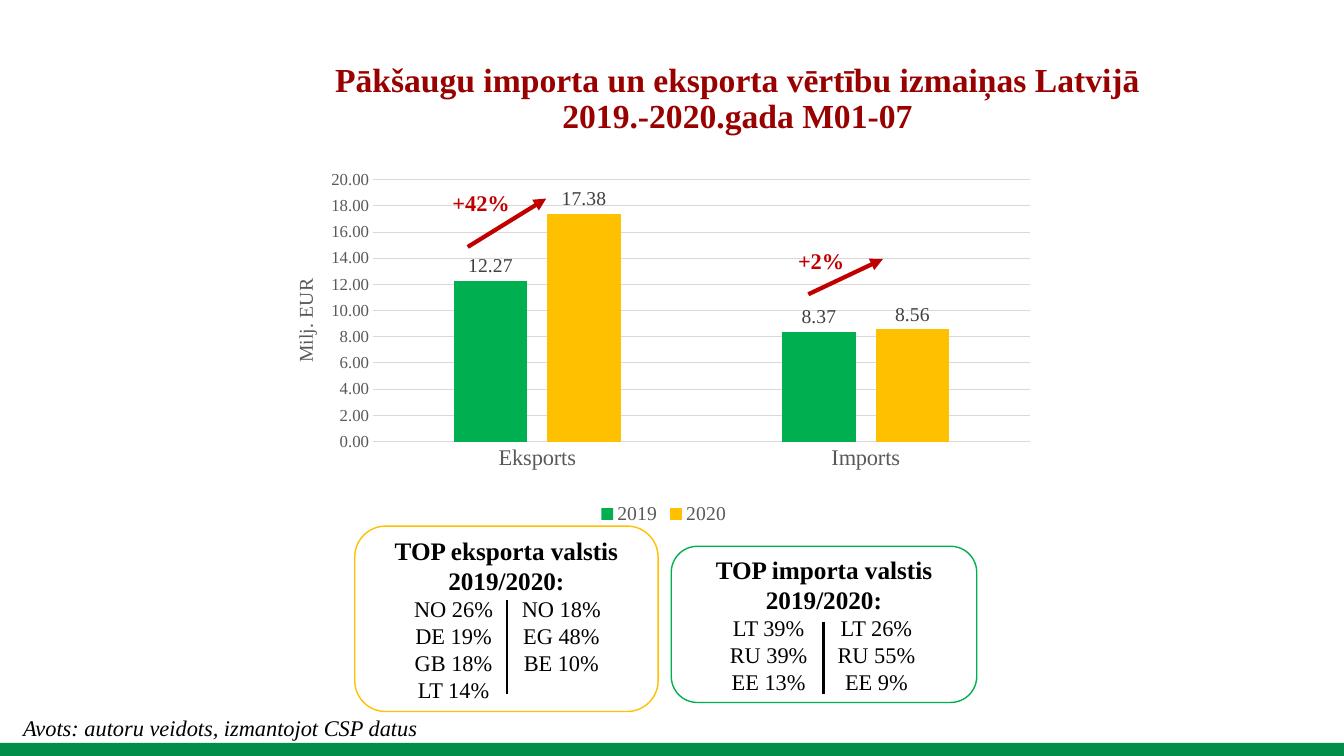
import pptx
import pptx.chart.data
import pptx.dml.color
import pptx.enum.chart
import pptx.enum.shapes
import pptx.enum.text
import pptx.oxml
import pptx.oxml.ns
import pptx.util
from lxml import etree

Pt = pptx.util.Pt
ALIGN = pptx.enum.text.PP_ALIGN
ANCHOR = pptx.enum.text.MSO_ANCHOR
SHAPES = pptx.enum.shapes.MSO_SHAPE
CHART = pptx.enum.chart
FACE = "Times New Roman"
GREEN, YELLOW, RED, GREY = "00B050", "FFC000", "C00000", "595959"
COLUMN_CENTRES = (57, 134)  # centred tab stops inside a country box


def colour(hex_code):
    return pptx.dml.color.RGBColor.from_string(hex_code)


def set_font(font, size, hex_code, **formats):
    for name, value in {"name": FACE, "size": Pt(size), **formats}.items():
        setattr(font, name, value)
    font.color.rgb = colour(hex_code)


def add_span(para, text, size, hex_code="000000", **formats):
    span = para.add_run()
    span.text = text
    set_font(span.font, size, hex_code, **formats)


def add_title(page, lines, size, hex_code):
    title = page.shapes.title
    place = {"left": 182.2, "top": 25.2, "width": 689, "height": 91.4}
    for name, value in place.items():
        setattr(title, name, Pt(value))
    frame = title.text_frame
    frame.auto_size = pptx.enum.text.MSO_AUTO_SIZE.NONE
    frame.vertical_anchor = ANCHOR.MIDDLE
    para = frame.paragraphs[0]
    para.alignment = ALIGN.CENTER
    para.line_spacing = 0.9
    # The first line hangs out to the left of the second
    properties = para._p.get_or_add_pPr()
    properties.set("marL", "0")
    properties.set("indent", str(-Pt(42)))
    for number, line in enumerate(lines):
        if number:
            para.add_line_break()
        add_span(para, line, size, hex_code, bold=True)


def add_text(page, place, text, hex_code="000000", **formats):
    box = page.shapes.add_textbox(*map(Pt, place))
    box.text_frame.word_wrap = True
    add_span(box.text_frame.paragraphs[0], text, 16, hex_code, **formats)


def add_panel(page, kind, place, fill, line=None):
    box = page.shapes.add_shape(kind, *map(Pt, place))
    box.shadow.inherit = False
    box.fill.solid()
    box.fill.fore_color.rgb = colour(fill)
    if line:
        box.line.color.rgb = colour(line)
        box.line.width = Pt(1)
    else:
        box.line.fill.background()
    return box


def add_country_box(page, place, line, heading, rows):
    box = add_panel(page, SHAPES.ROUNDED_RECTANGLE, place, "FFFFFF", line)
    frame = box.text_frame
    frame.word_wrap = True
    frame.vertical_anchor = ANCHOR.MIDDLE
    para = frame.paragraphs[0]
    para.alignment = ALIGN.CENTER
    add_span(para, heading, 18, bold=True)
    for row in rows:
        para = frame.add_paragraph()
        para.alignment = ALIGN.LEFT
        tabs = etree.SubElement(para._p.get_or_add_pPr(), pptx.oxml.ns.qn("a:tabLst"))
        for centre in COLUMN_CENTRES:
            etree.SubElement(tabs, pptx.oxml.ns.qn("a:tab"), pos=str(Pt(centre)), algn="ctr")
        add_span(para, "".join("\t" + entry for entry in row), 16)


def add_line(page, ends, hex_code, width, arrow=False):
    line = page.shapes.add_connector(
        pptx.enum.shapes.MSO_CONNECTOR.STRAIGHT, *map(Pt, ends))
    line.line.color.rgb = colour(hex_code)
    line.line.width = Pt(width)
    properties = line._element.spPr
    if arrow:
        outline = properties.find(pptx.oxml.ns.qn("a:ln"))
        etree.SubElement(outline, pptx.oxml.ns.qn("a:tailEnd"), type="triangle")
    etree.SubElement(properties, pptx.oxml.ns.qn("a:effectLst"))


def set_plot_layout(chart, x, y, w, h):
    area = chart._chartSpace.chart.plotArea
    for old in area.findall(pptx.oxml.ns.qn("c:layout")):
        area.remove(old)
    parts = {"layoutTarget": "inner", "xMode": "edge", "yMode": "edge",
             "x": x, "y": y, "w": w, "h": h}
    inner = "".join(f'<c:{name} val="{value}"/>' for name, value in parts.items())
    area.insert(0, pptx.oxml.parse_xml(
        f'<c:layout {pptx.oxml.ns.nsdecls("c")}>'
        f"<c:manualLayout>{inner}</c:manualLayout></c:layout>"))


def add_trade_chart(page, place, categories, series):
    data = pptx.chart.data.CategoryChartData(number_format="0.00")
    data.categories = categories
    for name, values, _ in series:
        data.add_series(name, values)
    chart = page.shapes.add_chart(
        CHART.XL_CHART_TYPE.COLUMN_CLUSTERED, *map(Pt, place), data).chart
    chart.has_title = False
    set_font(chart.font, 10, "000000")
    set_plot_layout(chart, 0.112, 0.042, 0.877, 0.718)

    # Legend
    chart.has_legend = True
    chart.legend.position = CHART.XL_LEGEND_POSITION.BOTTOM
    chart.legend.include_in_layout = False
    set_font(chart.legend.font, 14, GREY)

    # Axes
    category, value = chart.category_axis, chart.value_axis
    for axis, size in ((category, 16), (value, 12)):
        axis.major_tick_mark = CHART.XL_TICK_MARK.NONE
        axis.minor_tick_mark = CHART.XL_TICK_MARK.NONE
        set_font(axis.tick_labels.font, size, GREY)
    scale = {"minimum_scale": 0, "maximum_scale": 20, "major_unit": 2}
    for name, setting in scale.items():
        setattr(value, name, setting)
    value.tick_labels.number_format = "0.00"
    value.tick_labels.number_format_is_linked = False
    value.format.line.fill.background()
    for rule in (category.format.line, value.major_gridlines.format.line):
        rule.color.rgb = colour("D9D9D9")
        rule.width = Pt(0.75)
    add_span(value.axis_title.text_frame.paragraphs[0], "Milj. EUR", 14, GREY, bold=False)

    # Columns and their labels
    plot = chart.plots[0]
    for name, setting in {"gap_width": 219, "overlap": -27, "vary_by_categories": False}.items():
        setattr(plot, name, setting)
    for columns, (_, _, fill) in zip(plot.series, series):
        columns.format.fill.solid()
        columns.format.fill.fore_color.rgb = colour(fill)
        labels = columns.data_labels
        formats = {"show_value": True, "number_format": "0.00",
                   "number_format_is_linked": False,
                   "position": CHART.XL_LABEL_POSITION.OUTSIDE_END}
        for name, setting in formats.items():
            setattr(labels, name, setting)
        set_font(labels.font, 14, "404040")


def main():
    deck = pptx.Presentation()
    deck.slide_width, deck.slide_height = Pt(960), Pt(540)
    page = deck.slides.add_slide(deck.slide_layouts[5])

    # Footer band, source and title
    add_panel(page, SHAPES.RECTANGLE, (0, 530.6, 960, 9.4), "008E4A")
    add_text(page, (9.4, 506.9, 632, 26.6),
             "Avots: autoru veidots, izmantojot CSP datus", italic=True)
    add_title(page, ("Pākšaugu importa un eksporta vērtību izmaiņas Latvijā",
                     "2019.-2020.gada M01-07"), 24, "990000")

    # Top partner countries, 2019 beside 2020
    add_country_box(page, (253.4, 375.8, 216.7, 132.5), YELLOW,
                    "TOP eksporta valstis 2019/2020:",
                    (("NO 26%", "NO 18%"), ("DE 19%", "EG 48%"),
                     ("GB 18%", "BE 10%"), ("LT 14%",)))
    add_country_box(page, (479.5, 390.2, 218.2, 111.6), GREEN,
                    "TOP importa valstis 2019/2020:",
                    (("LT 39%", "LT 26%"), ("RU 39%", "RU 55%"), ("EE 13%", "EE 9%")))

    # Chart
    add_trade_chart(page, (206.6, 117.4, 535, 260.6), ("Eksports", "Imports"),
                    (("2019", (12.27, 8.37), GREEN), ("2020", (17.38, 8.56), YELLOW)))

    # Growth arrows with their labels
    for ends, place, growth in (
            ((577.4, 210.2, 630.7, 185), (563, 172.8, 60.5, 24.5), "+2%"),
            ((334.1, 176.4, 390.2, 141.8), (316.1, 131.8, 60.5, 23.8), "+42%")):
        add_line(page, ends, RED, 3, arrow=True)
        add_text(page, place, growth, RED, bold=True)

    # Dividers between the years
    for x, top in ((362.2, 428.4), (588.2, 444.2)):
        add_line(page, (x, top, x, 495.4), "000000", 2)

    deck.save("out.pptx")


if __name__ == "__main__":
    main()
